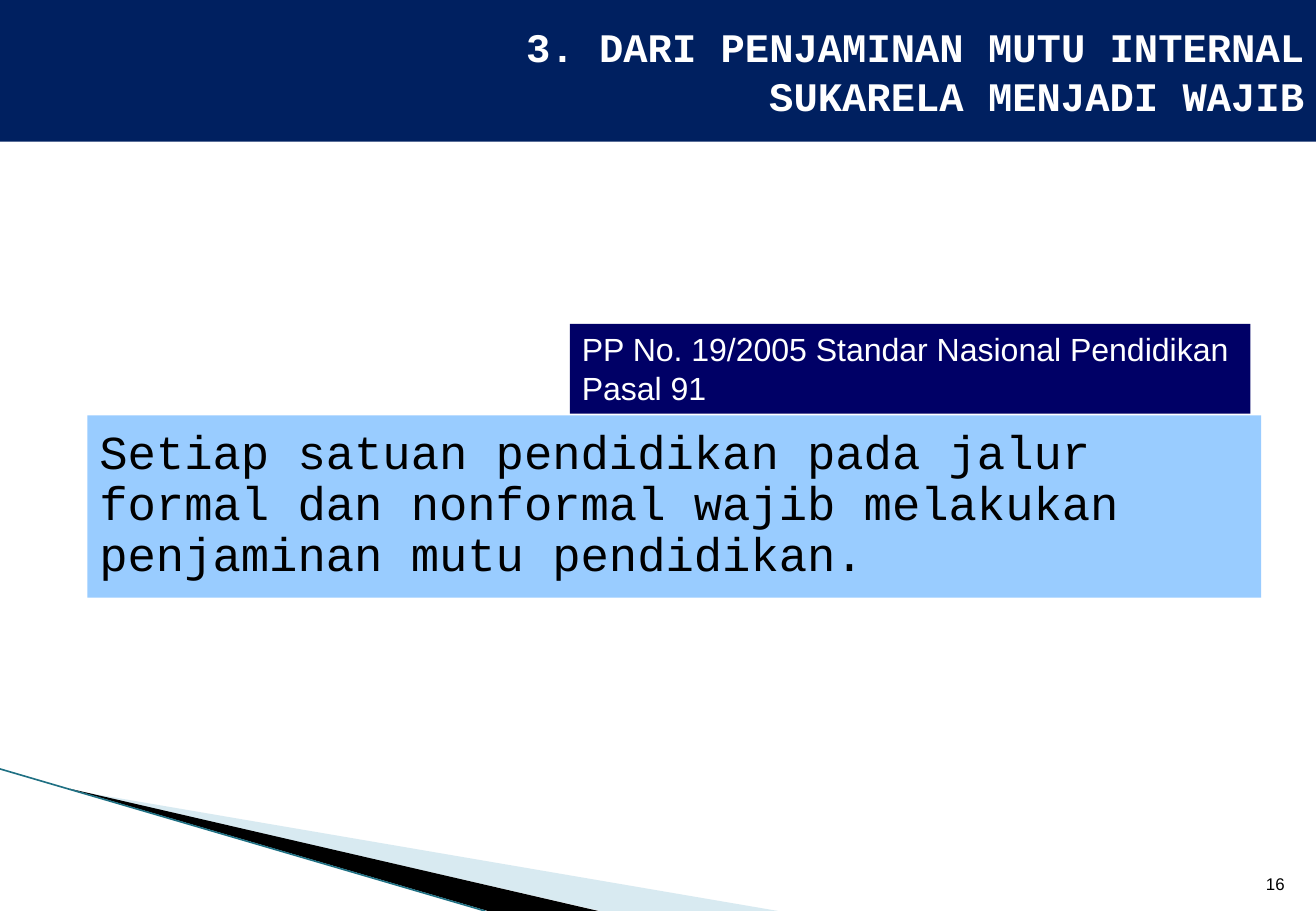
from dataclasses import dataclass

from lxml.etree import SubElement
from pptx import Presentation
from pptx.dml.color import RGBColor
from pptx.enum.shapes import MSO_CONNECTOR as Conn, MSO_SHAPE as Kind
from pptx.enum.text import MSO_ANCHOR as Anchor, PP_ALIGN as Align
from pptx.oxml.ns import qn
from pptx.util import Pt

WIDE, HIGH = 779.76, 540
MONO, SANS = "Courier New", "Arial"


@dataclass
class Wedge:
    points: list[tuple[float, float]]
    fill: str
    alpha: int = 100


@dataclass
class Panel:
    box: tuple[float, float, float, float]
    lines: list[str]
    font: str
    size: float
    color: str
    fill: str | None = None
    bold: bool = False
    align: Align = Align.LEFT
    anchor: Anchor = Anchor.TOP
    top: float = 3.6
    space: float = 1.0
    wrap: bool = True
    soft: bool = False


WEDGES = [
    Wedge([(42.5, 468.4), (461, HIGH), (355.7, HIGH)], "9FCBDC", 40),
    Wedge([(41.2, 467.5), (354.5, HIGH), (289, HIGH)], "000000"),
]
PANELS = [
    Panel((51.84, 246.24, 695.52, 108),
          ["Setiap satuan pendidikan pada jalur formal dan nonformal "
           "wajib melakukan penjaminan mutu pendidikan."],
          MONO, 28, "000000", "99CCFF", top=7.8, space=0.9),
    Panel((0, 0, WIDE, 84),
          ["3. DARI PENJAMINAN MUTU INTERNAL", "SUKARELA MENJADI WAJIB"],
          MONO, 24, "FFFFFF", "002060", bold=True, align=Align.RIGHT,
          anchor=Anchor.MIDDLE, soft=True),
    Panel((737.28, 504.72, 30.96, 28.8), ["16"], SANS, 10, "000000",
          align=Align.RIGHT, anchor=Anchor.BOTTOM),
    Panel((337.68, 192, 403.2, 53.28),
          ["PP No. 19/2005 Standar Nasional Pendidikan", "Pasal 91"],
          SANS, 19, "FFFFFF", "000066", wrap=False),
]


def tint(code: str) -> RGBColor:
    return RGBColor.from_string(code)


def draw_wedge(slide, wedge: Wedge) -> None:
    start, *rest = [(Pt(x), Pt(y)) for x, y in wedge.points]
    build = slide.shapes.build_freeform(*start)
    build.add_line_segments(rest, close=True)
    shape = build.convert_to_shape()
    shape.shadow.inherit = False
    shape.line.fill.background()
    shape.fill.solid()
    shape.fill.fore_color.rgb = tint(wedge.fill)
    if wedge.alpha < 100:
        color = shape.fill._xPr.find(qn("a:solidFill"))[0]
        SubElement(color, qn("a:alpha")).set("val", str(wedge.alpha * 1000))


def draw_edge(slide) -> None:
    edge = slide.shapes.add_connector(
        Conn.STRAIGHT, Pt(0), Pt(455.8), Pt(287.5), Pt(HIGH))
    edge.line.color.rgb = tint("1F7083")
    edge.line.width = Pt(0.95)
    SubElement(edge._element.spPr, qn("a:effectLst"))


def draw_panel(slide, panel: Panel) -> None:
    box = [Pt(n) for n in panel.box]
    if panel.fill:
        shape = slide.shapes.add_shape(Kind.RECTANGLE, *box)
        shape.shadow.inherit = False
        shape.line.fill.background()
        shape.fill.solid()
        shape.fill.fore_color.rgb = tint(panel.fill)
    else:
        shape = slide.shapes.add_textbox(*box)
    frame = shape.text_frame
    frame.word_wrap = panel.wrap
    frame.vertical_anchor = panel.anchor
    frame.margin_left = frame.margin_right = Pt(7.2)
    frame.margin_top, frame.margin_bottom = Pt(panel.top), Pt(3.6)
    para = frame.paragraphs[0]
    for i, line in enumerate(panel.lines):
        if i and panel.soft:
            para.add_line_break()
        elif i:
            para = frame.add_paragraph()
        para.alignment = panel.align
        para.line_spacing = panel.space
        run = para.add_run()
        run.text = line
        font = run.font
        font.name, font.size, font.bold = panel.font, Pt(panel.size), panel.bold
        font.color.rgb = tint(panel.color)


def main() -> None:
    deck = Presentation()
    deck.slide_width, deck.slide_height = Pt(WIDE), Pt(HIGH)
    slide = deck.slides.add_slide(deck.slide_layouts[6])
    for wedge in WEDGES:
        draw_wedge(slide, wedge)
    draw_edge(slide)
    for panel in PANELS:
        draw_panel(slide, panel)
    deck.save("out.pptx")


if __name__ == "__main__":
    main()
